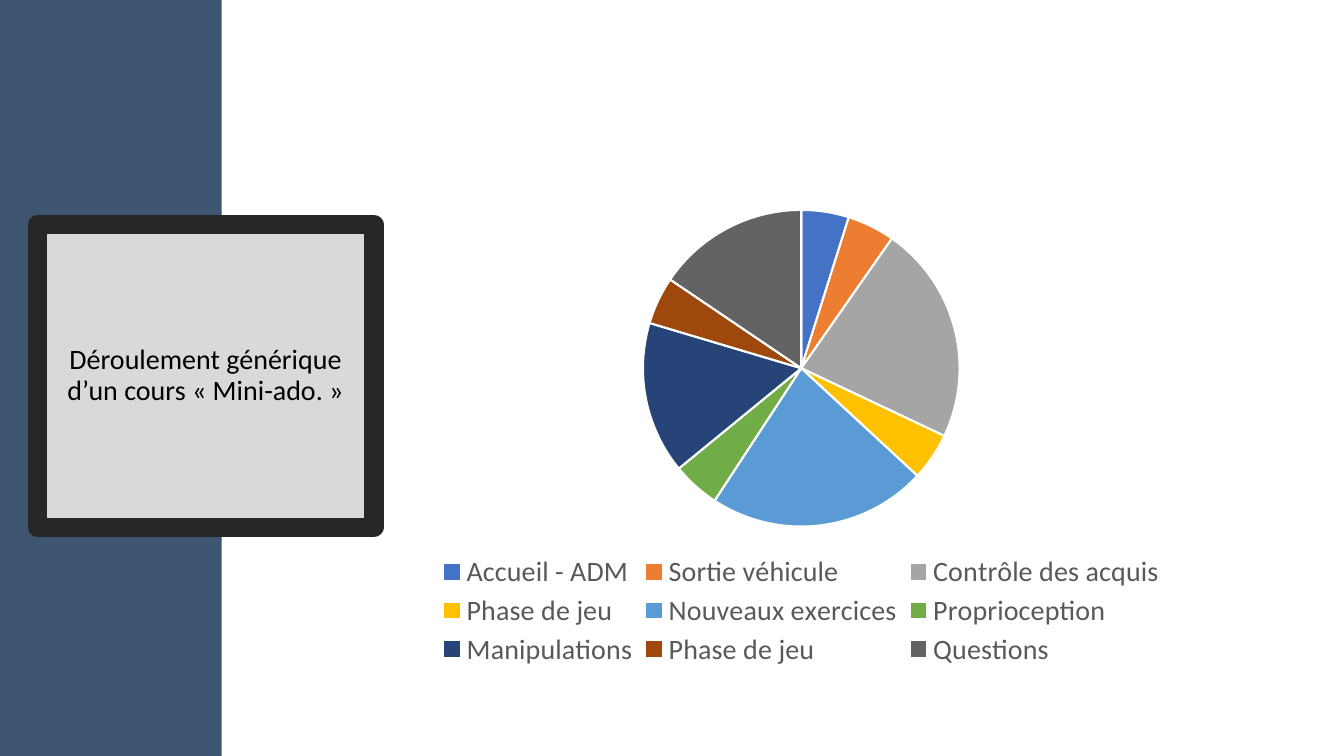
import pptx
import pptx.chart.data
import pptx.dml.color
import pptx.enum.chart
import pptx.enum.shapes
import pptx.enum.text
import pptx.oxml
import pptx.oxml.ns
import pptx.util
from pptx.util import Pt

RGBColor = pptx.dml.color.RGBColor
FONT = "Calibri"
BLACK = RGBColor(0x00, 0x00, 0x00)
WHITE = RGBColor(0xFF, 0xFF, 0xFF)
BAND_BLUE = RGBColor(0x3E, 0x55, 0x70)
PANEL_GREY = RGBColor(0xD9, 0xD9, 0xD9)
FRAME_BLACK = RGBColor(0x26, 0x26, 0x26)
LEGEND_GREY = RGBColor(0x59, 0x59, 0x59)

PHASES = [
    ("Accueil - ADM", 5, RGBColor(0x44, 0x72, 0xC4)),
    ("Sortie véhicule", 5, RGBColor(0xED, 0x7D, 0x31)),
    ("Contrôle des acquis", 23, RGBColor(0xA5, 0xA5, 0xA5)),
    ("Phase de jeu", 5, RGBColor(0xFF, 0xC0, 0x00)),
    ("Nouveaux exercices", 23, RGBColor(0x5B, 0x9B, 0xD5)),
    ("Proprioception", 5, RGBColor(0x70, 0xAD, 0x47)),
    ("Manipulations", 16, RGBColor(0x26, 0x44, 0x78)),
    ("Phase de jeu", 5, RGBColor(0x9E, 0x48, 0x0E)),
    ("Questions", 16, RGBColor(0x63, 0x63, 0x63)),
]


def format_font(font, size, color):
    font.name = FONT
    font.size = Pt(size)
    font.color.rgb = color


def add_band(slide, left, top, width, height):
    band = slide.shapes.add_shape(
        pptx.enum.shapes.MSO_SHAPE.RECTANGLE, Pt(left), Pt(top), Pt(width), Pt(height))
    band.shadow.inherit = False
    band.fill.solid()
    band.fill.fore_color.rgb = BAND_BLUE
    band.line.fill.background()


def place_title(slide, text, left, top, width, height):
    title = slide.shapes.title
    title.left, title.top = Pt(left), Pt(top)
    title.width, title.height = Pt(width), Pt(height)
    title.fill.solid()
    title.fill.fore_color.rgb = PANEL_GREY
    title.line.color.rgb = FRAME_BLACK
    title.line.width = Pt(13.75)
    outline = title._element.spPr.find(pptx.oxml.ns.qn("a:ln"))
    outline.append(pptx.oxml.parse_xml(f"<a:round {pptx.oxml.ns.nsdecls('a')}/>"))
    frame = title.text_frame
    frame.text = text
    frame.word_wrap = True
    frame.auto_size = pptx.enum.text.MSO_AUTO_SIZE.NONE
    frame.vertical_anchor = pptx.enum.text.MSO_ANCHOR.MIDDLE
    paragraph = frame.paragraphs[0]
    paragraph.alignment = pptx.enum.text.PP_ALIGN.CENTER
    paragraph.line_spacing = 0.9
    format_font(paragraph.runs[0].font, 20, BLACK)
    slide.shapes._spTree.append(title._element)


def set_layout(element, following, x, y, width, height, target=""):
    for old_layout in element.findall(pptx.oxml.ns.qn("c:layout")):
        element.remove(old_layout)
    layout = pptx.oxml.parse_xml(
        f"<c:layout {pptx.oxml.ns.nsdecls('c')}><c:manualLayout>{target}"
        '<c:xMode val="edge"/><c:yMode val="edge"/>'
        f'<c:x val="{x}"/><c:y val="{y}"/><c:w val="{width}"/><c:h val="{height}"/>'
        "</c:manualLayout></c:layout>")
    element.find(pptx.oxml.ns.qn(following)).addprevious(layout)


def add_phase_pie(slide, left, top, width, height):
    data = pptx.chart.data.CategoryChartData()
    data.categories = [name for name, share, color in PHASES]
    data.add_series("Series 1", [share for name, share, color in PHASES])
    chart = slide.shapes.add_chart(
        pptx.enum.chart.XL_CHART_TYPE.PIE,
        Pt(left), Pt(top), Pt(width), Pt(height), data).chart
    chart.has_title = False
    format_font(chart.font, 10, BLACK)
    plot = chart.plots[0]
    plot.vary_by_categories = True
    for index, (name, share, color) in enumerate(PHASES):
        slice_format = plot.series[0].points[index].format
        slice_format.fill.solid()
        slice_format.fill.fore_color.rgb = color
        slice_format.line.color.rgb = WHITE
        slice_format.line.width = Pt(1.5)
    chart.has_legend = True
    legend = chart.legend
    legend.position = pptx.enum.chart.XL_LEGEND_POSITION.BOTTOM
    legend.include_in_layout = False
    format_font(legend.font, 20, LEGEND_GREY)
    set_layout(legend._element, "c:overlay", 0.18, 0.74, 0.64, 0.25)
    plot_area = chart._chartSpace.chart.plotArea
    set_layout(plot_area, "c:pieChart", 0.36, 0.03, 0.28, 0.66,
               '<c:layoutTarget val="inner"/>')


def main():
    """Build the lesson outline slide with its title panel and pie chart."""
    presentation = pptx.Presentation()
    presentation.slide_width, presentation.slide_height = Pt(960), Pt(540)
    slide = presentation.slides.add_slide(presentation.slide_layouts[5])
    add_band(slide, 0, 0, 158.4, 540)
    place_title(slide, "Déroulement générique d’un cours « Mini-ado. »",
                26.64, 160.56, 240.48, 216)
    add_phase_pie(slide, 158.4, 139.7, 828, 342.7)
    presentation.save("out.pptx")


if __name__ == "__main__":
    main()
